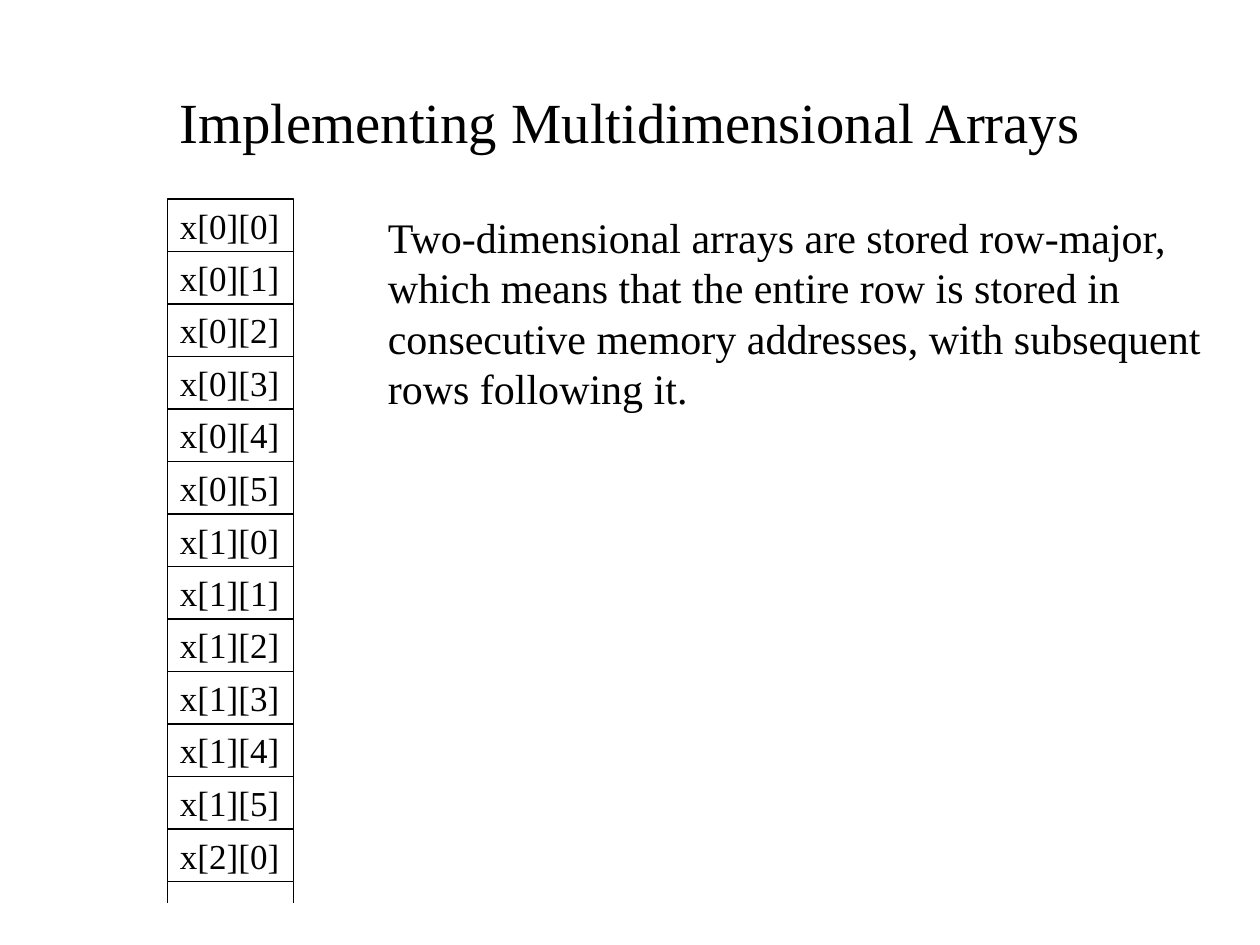
from lxml import etree
from pptx import Presentation
from pptx.dml.color import RGBColor
from pptx.enum.shapes import MSO_CONNECTOR, MSO_SHAPE
from pptx.enum.text import MSO_ANCHOR, PP_ALIGN
from pptx.oxml.ns import qn
from pptx.util import Inches, Pt

STRAIGHT = MSO_CONNECTOR.STRAIGHT
RECTANGLE = MSO_SHAPE.RECTANGLE
MIDDLE = MSO_ANCHOR.MIDDLE
CENTER = PP_ALIGN.CENTER

# Content
TITLE = "Implementing Multidimensional Arrays"
CELLS = [f"x[{row}][{column}]" for row in range(2) for column in range(6)] + ["x[2][0]"]
EXPLANATION = [
    "Two-dimensional arrays are stored row-major,",
    "which means that the entire row is stored in",
    "consecutive memory addresses, with subsequent",
    "rows following it.",
]

# Layout of the memory column, in inches
FONT = "Times New Roman"
INK = "000000"
LEFT, TOP, WIDTH = 1.33, 1.58, 1
ROW_HEIGHT = 5 / 12
RIGHT = LEFT + WIDTH
BOTTOM = TOP + ROW_HEIGHT * len(CELLS)
TAIL = 0.17


def paint(color_format, color):
    color_format.rgb = RGBColor.from_string(color)


def format_text(frame, size):
    for para in frame.paragraphs:
        for span in para.runs:
            span.font.name = FONT
            span.font.size = Pt(size)
            paint(span.font.color, INK)


def format_line(line):
    line.width = Pt(0.75)
    paint(line.color, INK)


def add_line(page, x1, y1, x2, y2):
    line = page.shapes.add_connector(
        STRAIGHT, Inches(x1), Inches(y1), Inches(x2), Inches(y2))
    format_line(line.line)
    etree.SubElement(line._element.spPr, qn("a:effectLst"))


def add_text(page, text, left, top, width, height, size):
    box = page.shapes.add_textbox(
        Inches(left), Inches(top), Inches(width), Inches(height))
    box.text_frame.word_wrap = False
    box.text_frame.text = text
    format_text(box.text_frame, size)
    return box


def main():
    deck = Presentation()
    deck.slide_width, deck.slide_height = Inches(10), Inches(7.5)
    page = deck.slides.add_slide(deck.slide_layouts[5])

    # Title
    title = page.shapes.title
    title.left, title.top = Inches(0.75), Inches(0.67)
    title.width, title.height = Inches(8.5), Inches(0.58)
    title.text_frame.text = TITLE
    title.text_frame.vertical_anchor = MIDDLE
    title.text_frame.paragraphs[0].alignment = CENTER
    format_text(title.text_frame, 32.4)

    # Memory column with its dividers and open end
    column = page.shapes.add_shape(
        RECTANGLE, Inches(LEFT), Inches(TOP), Inches(WIDTH), Inches(BOTTOM - TOP))
    column.shadow.inherit = False
    column.fill.background()
    format_line(column.line)
    for index in range(1, len(CELLS)):
        y = TOP + index * ROW_HEIGHT
        add_line(page, LEFT, y, RIGHT, y)
    for x in (LEFT, RIGHT):
        add_line(page, x, BOTTOM, x, BOTTOM + TAIL)

    # Cell labels
    for index, label in enumerate(CELLS):
        add_text(page, label, LEFT, TOP - 0.01 + index * ROW_HEIGHT, 0.99, 0.43, 20)

    # Explanation
    explanation = add_text(page, "\n".join(EXPLANATION), 2.98, 1.63, 6.71, 1.72, 24)
    for para in explanation.text_frame.paragraphs:
        para.line_spacing = Pt(28.8)

    deck.save("out.pptx")


if __name__ == "__main__":
    main()
